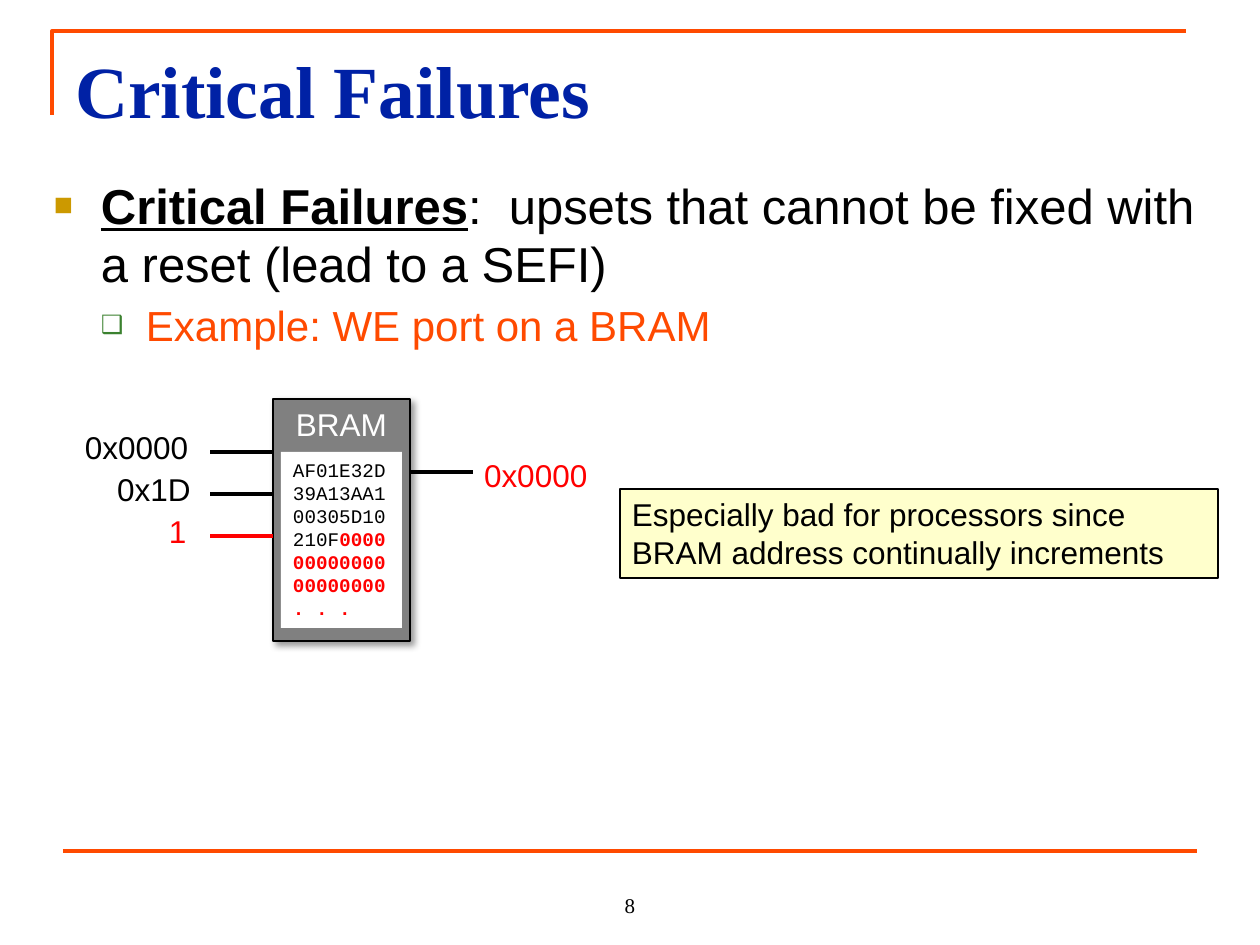
from dataclasses import dataclass
from lxml.etree import SubElement
from pptx import Presentation
from pptx.dml.color import RGBColor
from pptx.enum.shapes import MSO_CONNECTOR, MSO_SHAPE
from pptx.enum.text import MSO_ANCHOR, PP_ALIGN
from pptx.oxml.ns import qn
from pptx.util import Emu, Pt

PX = 914400 // 126  # EMU in one px


@dataclass(frozen=True)
class Theme:
    black: str = "000000"
    white: str = "FFFFFF"
    red: str = "FF0000"
    rule: str = "FF4A00"
    title: str = "0021A5"
    gray: str = "808080"
    note: str = "FFFFCC"
    gold: str = "CC9900"
    green: str = "3B812F"
    sans: str = "Arial"
    serif: str = "Times New Roman"
    mono: str = "Courier New"
    head: int = 42
    lead: int = 28
    sub: int = 24
    label: int = 18
    foot: int = 12
    code: int = 11


T = Theme()


def px(*nums):
    return [Emu(n * PX) for n in nums]


def rgb(code):
    return RGBColor.from_string(code)


def add(tag, parent, **attrs):
    return SubElement(parent, qn(tag), {k: str(v) for k, v in attrs.items()})


def write(para, text, size=T.label, color=T.black, face=T.sans,
          bold=False, line=False):
    run = para.add_run()
    run.text = text
    font = run.font
    font.size, font.name = Pt(size), face
    font.bold, font.underline = bold, line
    font.color.rgb = rgb(color)


def frame(shape, align=PP_ALIGN.LEFT, anchor=MSO_ANCHOR.TOP, top=6, wrap=True):
    body = shape.text_frame
    body.word_wrap, body.vertical_anchor = wrap, anchor
    body.margin_left, body.margin_right = px(12, 12)
    body.margin_top, body.margin_bottom = px(top, 6)
    para = body.paragraphs[0]
    para.alignment = align
    return para


def label(slide, box, text, **look):
    shape = slide.shapes.add_textbox(*px(*box))
    write(frame(shape), text, **look)


def rect(slide, box, fill, edge=None):
    shape = slide.shapes.add_shape(MSO_SHAPE.RECTANGLE, *px(*box))
    shape.shadow.inherit = False
    shape.fill.solid()
    shape.fill.fore_color.rgb = rgb(fill)
    if edge:
        shape.line.color.rgb = rgb(edge)
        shape.line.width = Pt(0.75)
    else:
        shape.line.fill.background()
    return shape


def wire(slide, ends, color=T.black, width=2.5):
    line = slide.shapes.add_connector(MSO_CONNECTOR.STRAIGHT, *px(*ends))
    line.line.color.rgb = rgb(color)
    line.line.width = Pt(width)
    add("a:effectLst", line._element.spPr)


def bullet(para, mark, color, scale, left, hang):
    props = para._p.get_or_add_pPr()
    props.set("marL", str(left * PX))
    props.set("indent", str(-hang * PX))
    add("a:srgbClr", add("a:buClr", props), val=color)
    add("a:buSzPct", props, val=scale * 1000)
    add("a:buFont", props, typeface=T.sans)
    add("a:buChar", props, char=mark)


def shade(shape):
    effects = shape._element.spPr.find(qn("a:effectLst"))
    drop = add("a:outerShdw", effects, blurRad=Pt(4), dist=Pt(3),
               dir=45 * 60000, algn="tl", rotWithShape=0)
    add("a:alpha", add("a:srgbClr", drop, val=T.black), val=40000)


def rules(slide):
    # Corner at the top, line at the foot
    path = slide.shapes.build_freeform(52, 115, scale=PX)
    path.add_line_segments([(52, 31), (1186, 31)], close=False)
    corner = path.convert_to_shape()
    corner.shadow.inherit = False
    corner.fill.background()
    corner.line.color.rgb = rgb(T.rule)
    corner.line.width = Pt(2.25)
    wire(slide, (63, 851, 1197, 851), T.rule, 2.25)


def heading(slide):
    title = slide.shapes.title
    title.left, title.top, title.width, title.height = px(63, 38, 1166, 130)
    write(frame(title, top=7), "Critical Failures", size=T.head,
          color=T.title, face=T.serif, bold=True)


def points(slide):
    shape = slide.shapes.add_textbox(*px(42, 168, 1176, 168))
    first = frame(shape, top=7)
    bullet(first, "■", T.gold, 65, 47, 47)
    write(first, "Critical Failures", size=T.lead, bold=True, line=True)
    write(first, ":  upsets that cannot be fixed with a reset (lead to a SEFI)",
          size=T.lead)
    second = shape.text_frame.add_paragraph()
    second.level = 1
    bullet(second, "❑", T.green, 60, 92, 45)
    second.space_before = Pt(4)
    write(second, "Example: WE port on a BRAM", size=T.sub, color=T.rule)


def memory(slide):
    # Block and its pins
    block = rect(slide, (273, 399, 137, 242), T.gray, T.black)
    shade(block)
    write(frame(block, PP_ALIGN.CENTER), "BRAM", color=T.white)
    pins = [("0x0000", 73, 136, T.black), ("0x1D", 105, 107, T.black),
            ("1", 157, 53, T.red)]
    for row, (text, left, width, color) in enumerate(pins):
        drop = row * 42
        wire(slide, (273, 452 + drop, 210, 452 + drop), color)
        label(slide, (left, 422 + drop, width, 50), text, color=color)
    wire(slide, (473, 472, 410, 472))
    label(slide, (472, 450, 158, 50), "0x0000", color=T.red)

    # Contents: good part, then lost part
    words = [("AF01E32D", ""), ("39A13AA1", ""), ("00305D10", ""),
             ("210F", "0000"), ("", "00000000"), ("", "00000000"),
             ("", ". . .")]
    cells = rect(slide, (281, 452, 121, 176), T.white)
    para = frame(cells, wrap=False)
    for row, (good, lost) in enumerate(words):
        if row:
            para = cells.text_frame.add_paragraph()
            para.alignment = PP_ALIGN.LEFT
        if good:
            write(para, good, size=T.code, face=T.mono)
        if lost:
            write(para, lost, size=T.code, face=T.mono, color=T.red, bold=True)


def main():
    deck = Presentation()
    deck.slide_width, deck.slide_height = px(1260, 945)
    slide = deck.slides.add_slide(deck.slide_layouts[5])
    rules(slide)
    heading(slide)
    points(slide)
    memory(slide)

    # Remark and page number
    note = rect(slide, (620, 489, 598, 89), T.note, T.black)
    write(frame(note), "Especially bad for processors since "
          "BRAM address continually increments")
    page = slide.shapes.add_textbox(*px(504, 861, 252, 63))
    write(frame(page, PP_ALIGN.CENTER, MSO_ANCHOR.BOTTOM), "8",
          size=T.foot, face=T.serif)
    deck.save("out.pptx")


if __name__ == "__main__":
    main()
